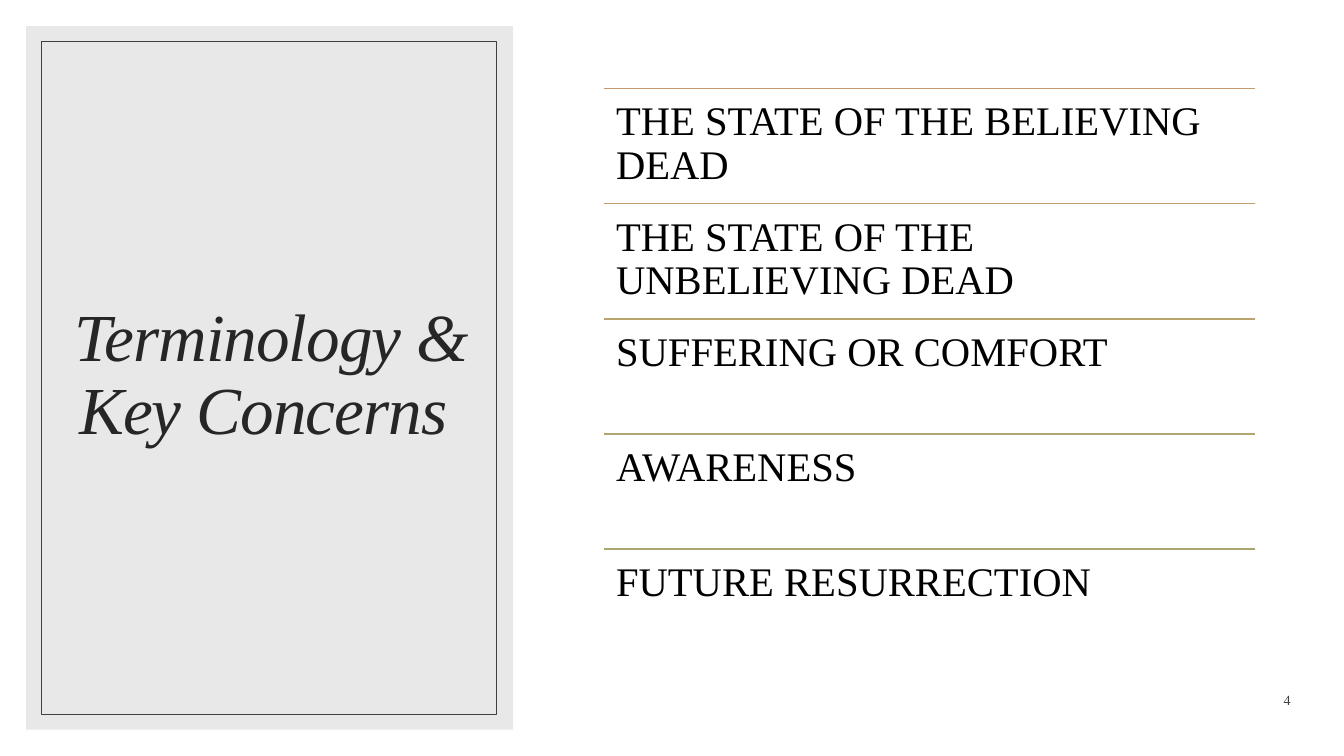
from lxml import etree
from pptx import Presentation
from pptx.dml.color import RGBColor
from pptx.enum.shapes import MSO_CONNECTOR, MSO_SHAPE
from pptx.enum.text import MSO_ANCHOR, MSO_AUTO_SIZE, PP_ALIGN
from pptx.oxml.ns import qn
from pptx.util import Inches, Pt

RECTANGLE = MSO_SHAPE.RECTANGLE
STRAIGHT = MSO_CONNECTOR.STRAIGHT
TOP, MIDDLE, BOTTOM = MSO_ANCHOR.TOP, MSO_ANCHOR.MIDDLE, MSO_ANCHOR.BOTTOM
LEFT, CENTER, RIGHT = PP_ALIGN.LEFT, PP_ALIGN.CENTER, PP_ALIGN.RIGHT
NO_AUTOFIT = MSO_AUTO_SIZE.NONE

FONT = "Times New Roman"
COLORS = {
    "backdrop": "FFFFFF",
    "panel": "D9D9D9",
    "frame": "404040",
    "title": "262626",
    "concern": "000000",
    "number": "404040",
}
SLIDE_WIDTH, SLIDE_HEIGHT = 13.33, 7.5
TITLE = "Terminology & Key Concerns "

# Each concern with the colour of the rule above it
CONCERNS = [
    ("THE STATE OF THE BELIEVING DEAD", "C69A6C"),
    ("THE STATE OF THE UNBELIEVING DEAD", "BFA06D"),
    ("SUFFERING OR COMFORT", "B9A46D"),
    ("AWARENESS", "B1A66F"),
    ("FUTURE RESURRECTION", "AAA670"),
]


def rgb(hex_color):
    return RGBColor.from_string(hex_color)


def add_rectangle(slide, box, fill=None, line=None):
    rectangle = slide.shapes.add_shape(RECTANGLE, *map(Inches, box))
    rectangle.shadow.inherit = False
    if fill:
        rectangle.fill.solid()
        rectangle.fill.fore_color.rgb = rgb(fill)
    else:
        rectangle.fill.background()
    if line:
        rectangle.line.color.rgb = rgb(line)
        rectangle.line.width = Pt(0.5)
    else:
        rectangle.line.fill.background()
    return rectangle


def write_text(holder, text, size, color, align, anchor, margins=(0.1, 0.05)):
    """Fill a text holder with one paragraph and return that paragraph."""
    frame = holder.text_frame
    frame.text = text
    frame.word_wrap = True
    frame.auto_size = NO_AUTOFIT
    frame.vertical_anchor = anchor
    frame.margin_left = frame.margin_right = Inches(margins[0])
    frame.margin_top = frame.margin_bottom = Inches(margins[1])
    paragraph = frame.paragraphs[0]
    paragraph.alignment = align
    font = paragraph.runs[0].font
    font.name, font.size, font.color.rgb = FONT, Pt(size), rgb(color)
    return paragraph


def add_title_panel(slide, box):
    left, top, width, height = box

    # Translucent panel
    panel = add_rectangle(slide, box, fill=COLORS["panel"])
    panel_color = panel.element.spPr.find(".//" + qn("a:srgbClr"))
    etree.SubElement(panel_color, qn("a:alpha")).set("val", "60000")

    # Title, brought in front of the panel
    title = slide.shapes.title
    title.left, title.top = Inches(left + 0.37), Inches(top + 0.35)
    title.width, title.height = Inches(width - 0.71), Inches(height - 0.74)
    paragraph = write_text(title, TITLE, 48, COLORS["title"], CENTER, MIDDLE)
    paragraph.line_spacing = 0.9
    run = paragraph.runs[0]
    run.font.italic = True
    run.font._element.set("spc", "-70")
    title.element.getparent().append(title.element)

    # Thin inner frame
    inset = 0.15
    add_rectangle(slide, (left + inset, top + inset, width - 0.32, height - 2 * inset),
                  line=COLORS["frame"])


def add_concern_list(slide, box):
    left, top, width, height = box
    row_height = height / len(CONCERNS)
    group = slide.shapes.add_group_shape()
    for index, (concern, rule_color) in enumerate(CONCERNS):
        row_top = top + index * row_height

        # Rule above the row
        rule = group.shapes.add_connector(
            STRAIGHT, Inches(left), Inches(row_top), Inches(left + width), Inches(row_top))
        rule.line.color.rgb = rgb(rule_color)
        rule.line.width = Pt(1)
        etree.SubElement(rule.element.spPr, qn("a:effectLst"))

        # Concern text
        row = group.shapes.add_textbox(
            *map(Inches, (left, row_top, width, row_height)))
        paragraph = write_text(row, concern, 29, COLORS["concern"], LEFT, TOP, (0.12, 0.12))
        paragraph.line_spacing = 0.9


def add_slide_number(slide, box):
    number = slide.shapes.add_textbox(*map(Inches, box))
    paragraph = write_text(number, "4", 10, COLORS["number"], RIGHT, BOTTOM)
    paragraph.space_after = Pt(6)


def main():
    presentation = Presentation()
    presentation.slide_width = Inches(SLIDE_WIDTH)
    presentation.slide_height = Inches(SLIDE_HEIGHT)
    title_only = presentation.slide_layouts[5]
    slide = presentation.slides.add_slide(title_only)

    add_rectangle(slide, (0, 0, SLIDE_WIDTH, SLIDE_HEIGHT), fill=COLORS["backdrop"])
    add_title_panel(slide, (0.26, 0.26, 4.83, 6.98))
    add_slide_number(slide, (12, 6.78, 0.9, 0.3))
    add_concern_list(slide, (5.99, 0.88, 6.46, 5.71))
    presentation.save("out.pptx")


if __name__ == "__main__":
    main()
